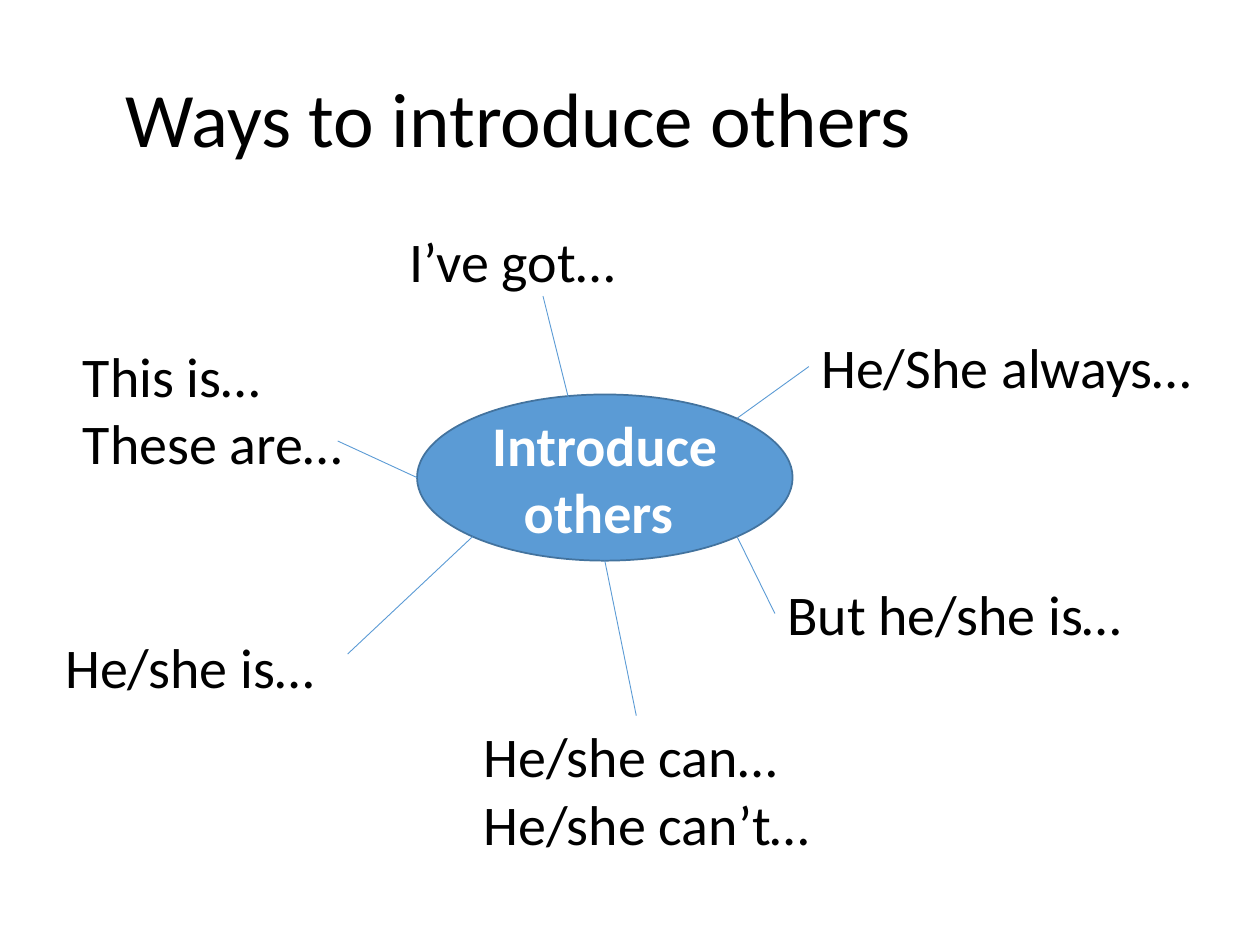
"""Build a mind map slide of phrases for introducing other people."""
from dataclasses import dataclass
from typing import Optional

from lxml import etree
from pptx import Presentation
from pptx.dml.color import RGBColor
from pptx.enum import shapes, text
from pptx.oxml import ns
from pptx.util import Pt


@dataclass(frozen=True)
class Theme:
    font: str = "Calibri"
    ink: str = "000000"
    hub_ink: str = "FFFFFF"
    accent: str = "5B9BD5"
    outline: str = "43739E"
    title_size: float = 44
    body_size: float = 32
    outline_width: float = 1
    spoke_width: float = 0.5


@dataclass(frozen=True)
class Box:
    left: float
    top: float
    width: float
    height: float

    def lengths(self) -> list:
        return [Pt(v) for v in (self.left, self.top, self.width, self.height)]


@dataclass(frozen=True)
class Phrase:
    lines: tuple
    box: Box
    outer: tuple
    inner: tuple
    side: Optional[int] = None


THEME = Theme()
LEFT_SIDE = 1
TITLE_BOX = Box(64.8, 18, 620.6, 104.4)
HUB_BOX = Box(238.3, 225.4, 214.6, 95)
PHRASES = (
    Phrase(("This is…", "These are…"), Box(40.3, 191.5, 175.7, 85),
           (193, 252), (238.3, 272.9)),
    Phrase(("I’ve got…",), Box(226.8, 126, 221, 46),
           (310.3, 169.2), (325.4, 229.7)),
    Phrase(("He/She always…",), Box(462.2, 186.5, 257.8, 46),
           (462.2, 209.5), (421.2, 239), LEFT_SIDE),
    Phrase(("But he/she is…",), Box(442.8, 327.6, 221, 46),
           (442.8, 350.6), (421.2, 306.7), LEFT_SIDE),
    Phrase(("He/she can…", "He/she can’t…"), Box(269.3, 409, 221, 85),
           (363.6, 409), (345.6, 320.4)),
    Phrase(("He/she is…",), Box(30.2, 357.8, 221, 46),
           (198.7, 373.7), (270, 306.7)),
)


def apply(target, values: dict) -> None:
    for name, value in values.items():
        setattr(target, name, value)


def write(frame, lines: tuple, size: float, color: str, bold: bool = False,
          frame_format: Optional[dict] = None,
          paragraph_format: Optional[dict] = None) -> None:
    apply(frame, {"word_wrap": True, **(frame_format or {})})
    for index, line in enumerate(lines):
        paragraph = frame.add_paragraph() if index else frame.paragraphs[0]
        apply(paragraph, paragraph_format or {})
        run = paragraph.add_run()
        run.text = line
        apply(run.font, {"name": THEME.font, "size": Pt(size), "bold": bold})
        run.font.color.rgb = RGBColor.from_string(color)


def draw_title(slide) -> None:
    title = slide.shapes.add_textbox(*TITLE_BOX.lengths())
    write(title.text_frame, ("Ways to introduce others",),
          THEME.title_size, THEME.ink,
          frame_format={"vertical_anchor": text.MSO_ANCHOR.MIDDLE},
          paragraph_format={"line_spacing": 0.9})


def draw_hub(slide) -> None:
    hub = slide.shapes.add_shape(shapes.MSO_SHAPE.OVAL, *HUB_BOX.lengths())
    hub.shadow.inherit = False
    hub.fill.solid()
    hub.fill.fore_color.rgb = RGBColor.from_string(THEME.accent)
    hub.line.color.rgb = RGBColor.from_string(THEME.outline)
    hub.line.width = Pt(THEME.outline_width)
    write(hub.text_frame, ("Introduce others ",),
          THEME.body_size, THEME.hub_ink, bold=True,
          frame_format={"vertical_anchor": text.MSO_ANCHOR.MIDDLE},
          paragraph_format={"alignment": text.PP_ALIGN.CENTER})


def draw_phrase(slide, phrase: Phrase) -> None:
    label = slide.shapes.add_textbox(*phrase.box.lengths())
    write(label.text_frame, phrase.lines, THEME.body_size, THEME.ink,
          frame_format={"auto_size": text.MSO_AUTO_SIZE.SHAPE_TO_FIT_TEXT})
    spoke = slide.shapes.add_connector(
        shapes.MSO_CONNECTOR.STRAIGHT,
        *(Pt(v) for v in phrase.outer + phrase.inner))
    spoke.line.color.rgb = RGBColor.from_string(THEME.accent)
    spoke.line.width = Pt(THEME.spoke_width)
    etree.SubElement(spoke._element.spPr, ns.qn("a:effectLst"))
    if phrase.side is not None:
        spoke.begin_connect(label, phrase.side)


def main() -> None:
    deck = Presentation()
    apply(deck, {"slide_width": Pt(720), "slide_height": Pt(540)})
    slide = deck.slides.add_slide(deck.slide_layouts[6])
    draw_title(slide)
    draw_hub(slide)
    for phrase in PHRASES:
        draw_phrase(slide, phrase)
    deck.save("out.pptx")


if __name__ == "__main__":
    main()
